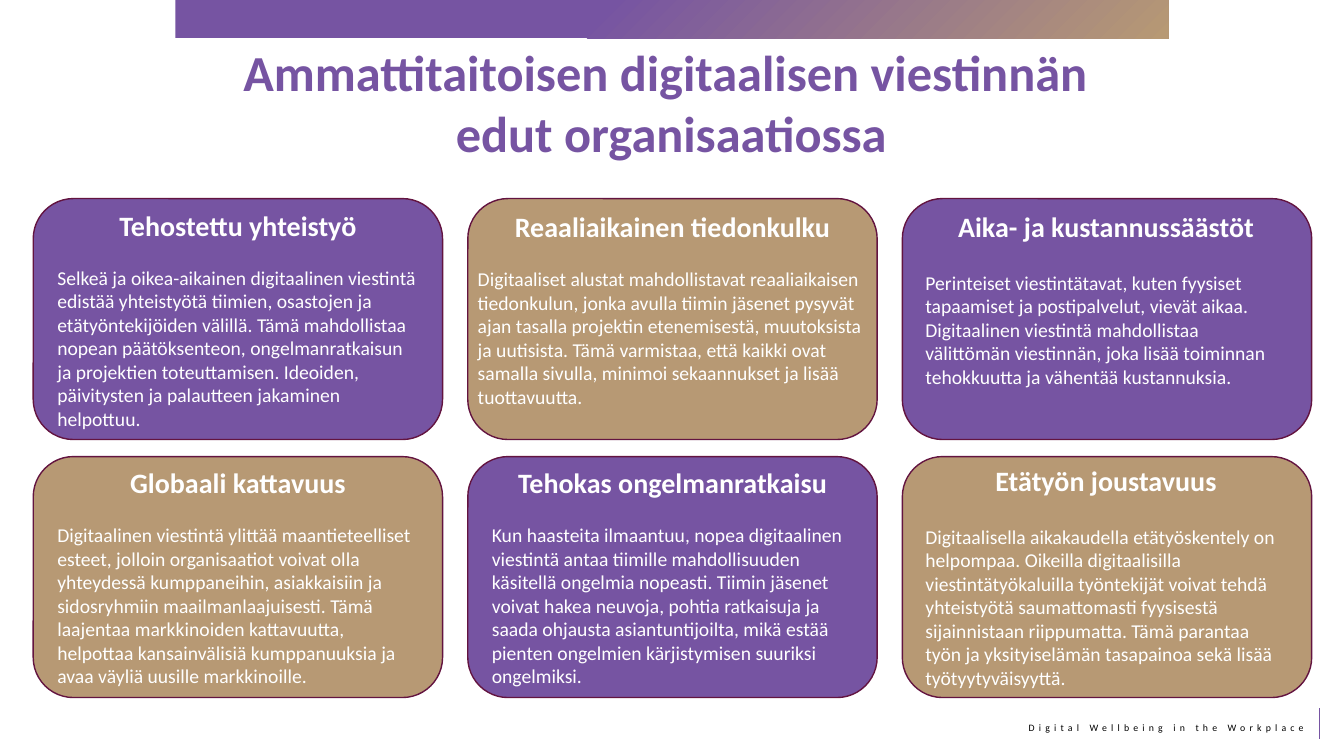
import dataclasses
import typing

import lxml.etree
import pptx
import pptx.dml.color
import pptx.enum.dml
import pptx.enum.shapes
import pptx.enum.text
import pptx.oxml.ns
import pptx.util

Inches = pptx.util.Inches
Align = pptx.enum.text.PP_ALIGN
Shape = pptx.enum.shapes.MSO_SHAPE
qn = pptx.oxml.ns.qn


@dataclasses.dataclass(frozen=True)
class Theme:
    font: str = "Calibri"
    purple: str = "7654A2"
    gold: str = "B79974"
    wine: str = "631440"
    white: str = "FFFFFF"
    black: str = "000000"
    title: int = 36
    head: int = 20
    body: int = 14
    foot: int = 7


class Box(typing.NamedTuple):
    left: float
    top: float
    width: float
    height: float

    def place(self) -> list[int]:
        return [Inches(side) for side in self]


@dataclasses.dataclass(frozen=True)
class Card:
    head: str
    body: str
    text: Box
    gap: float = 17


THEME = Theme()
COLS = 3
FIRST = Box(0.33, 1.97, 4.06, 2.39)
STEP_X, STEP_Y = 4.31, 2.56

CARDS = [
    Card(
        "Tehostettu yhteistyö",
        "Selkeä ja oikea-aikainen digitaalinen viestintä edistää yhteistyötä tiimien, "
        "osastojen ja etätyöntekijöiden välillä. Tämä mahdollistaa nopean päätöksenteon, "
        "ongelmanratkaisun ja projektien toteuttamisen. Ideoiden, päivitysten ja "
        "palautteen jakaminen helpottuu.",
        Box(0.47, 1.97, 3.78, 2.39),
    ),
    Card(
        "Reaaliaikainen tiedonkulku",
        "Digitaaliset alustat mahdollistavat reaaliaikaisen tiedonkulun, jonka avulla "
        "tiimin jäsenet pysyvät ajan tasalla projektin etenemisestä, muutoksista ja "
        "uutisista. Tämä varmistaa, että kaikki ovat samalla sivulla, minimoi "
        "sekaannukset ja lisää tuottavuutta.",
        Box(4.64, 2.02, 4.06, 2.09),
    ),
    Card(
        "Aika- ja kustannussäästöt",
        "Perinteiset viestintätavat, kuten fyysiset tapaamiset ja postipalvelut, vievät "
        "aikaa. Digitaalinen viestintä mahdollistaa välittömän viestinnän, joka lisää "
        "toiminnan tehokkuutta ja vähentää kustannuksia.",
        Box(9.08, 1.99, 3.78, 1.95),
        19.5,
    ),
    Card(
        "Globaali kattavuus",
        "Digitaalinen viestintä ylittää maantieteelliset esteet, jolloin organisaatiot "
        "voivat olla yhteydessä kumppaneihin, asiakkaisiin ja sidosryhmiin "
        "maailmanlaajuisesti. Tämä laajentaa markkinoiden kattavuutta, helpottaa "
        "kansainvälisiä kumppanuuksia ja avaa väyliä uusille markkinoille.",
        Box(0.47, 4.56, 3.78, 2.32),
    ),
    Card(
        "Tehokas ongelmanratkaisu",
        "Kun haasteita ilmaantuu, nopea digitaalinen viestintä antaa tiimille "
        "mahdollisuuden käsitellä ongelmia nopeasti. Tiimin jäsenet voivat hakea neuvoja, "
        "pohtia ratkaisuja ja saada ohjausta asiantuntijoilta, mikä estää pienten "
        "ongelmien kärjistymisen suuriksi ongelmiksi.",
        Box(4.78, 4.56, 3.78, 2.32),
    ),
    Card(
        "Etätyön joustavuus",
        "Digitaalisella aikakaudella etätyöskentely on helpompaa. Oikeilla digitaalisilla "
        "viestintätyökaluilla työntekijät voivat tehdä yhteistyötä saumattomasti "
        "fyysisestä sijainnistaan riippumatta. Tämä parantaa työn ja yksityiselämän "
        "tasapainoa sekä lisää työtyytyväisyyttä.",
        Box(9.08, 4.54, 3.78, 2.36),
        19.5,
    ),
]


def tint(code: str) -> pptx.dml.color.RGBColor:
    return pptx.dml.color.RGBColor.from_string(code)


def add_run(para, text: str, size: int, color: str, bold: bool = False):
    run = para.add_run()
    run.text = text
    run.font.name = THEME.font
    run.font.size = pptx.util.Pt(size)
    run.font.bold = bold
    run.font.color.rgb = tint(color)
    return run


def add_text(shapes, box: Box):
    frame = shapes.add_textbox(*box.place()).text_frame
    frame.word_wrap = True
    return frame


def draw_banner(shapes) -> None:
    banner = shapes.add_shape(Shape.RECTANGLE, *Box(1.74, 0, 9.85, 0.38).place())
    banner.shadow.inherit = False
    banner.line.fill.background()
    banner.fill.gradient()
    stops = banner.fill.gradient_stops
    for stop, color, spot in zip(stops, (THEME.gold, THEME.purple), (0, 0.58)):
        stop.color.rgb = tint(color)
        stop.position = spot
    grad = banner._element.spPr.find(qn("a:gradFill"))
    grad.remove(grad.find(qn("a:lin")))
    focus = lxml.etree.Element(qn("a:path"), path="circle")
    lxml.etree.SubElement(focus, qn("a:fillToRect"), l="100000", t="100000")
    grad.find(qn("a:gsLst")).addnext(focus)


def draw_title(shapes) -> None:
    para = add_text(shapes, Box(0.93, 0.36, 11.46, 0.88)).paragraphs[0]
    para.alignment = Align.CENTER
    look = (THEME.title, THEME.purple, True)
    add_run(para, "Ammattitaitoisen digitaalisen viestinnän ", *look)
    para.add_line_break()
    add_run(para, "edut organisaatiossa", *look)


def draw_foot(shapes) -> None:
    para = add_text(shapes, Box(9.68, 7.11, 3.35, 0.22)).paragraphs[0]
    para.alignment = Align.RIGHT
    run = add_run(para, "Digital Wellbeing in the Workplace", THEME.foot, THEME.black)
    run.font._element.set("spc", "300")
    ends = [Inches(side) for side in (13.09, 7.33, 13.09, 7.02)]
    rule = shapes.add_connector(pptx.enum.shapes.MSO_CONNECTOR.STRAIGHT, *ends)
    rule.line.color.rgb = tint(THEME.purple)
    rule.line.width = pptx.util.Pt(0.75)
    lxml.etree.SubElement(rule._element.spPr, qn("a:effectLst"))


def draw_card(shapes, card: Card, box: Box, color: str) -> None:
    group = shapes.add_group_shape().shapes
    panel = group.add_shape(Shape.ROUNDED_RECTANGLE, *box.place())
    panel.shadow.inherit = False
    panel.fill.solid()
    panel.fill.fore_color.rgb = tint(color)
    panel.line.color.rgb = tint(THEME.wine)
    panel.line.width = pptx.util.Pt(1)
    frame = add_text(group, card.text)
    frame.auto_size = pptx.enum.text.MSO_AUTO_SIZE.SHAPE_TO_FIT_TEXT
    frame.vertical_anchor = pptx.enum.text.MSO_ANCHOR.MIDDLE
    head = frame.paragraphs[0]
    head.alignment = Align.CENTER
    head.space_after = pptx.util.Pt(card.gap)
    add_run(head, card.head, THEME.head, THEME.white, True)
    add_run(frame.add_paragraph(), card.body, THEME.body, THEME.white)


def main() -> None:
    deck = pptx.Presentation()
    deck.slide_width, deck.slide_height = Inches(13.33), Inches(7.5)
    shapes = deck.slides.add_slide(deck.slide_layouts[6]).shapes
    draw_foot(shapes)
    draw_banner(shapes)
    draw_title(shapes)
    for spot, card in enumerate(CARDS):
        row, col = divmod(spot, COLS)
        box = FIRST._replace(left=FIRST.left + col * STEP_X, top=FIRST.top + row * STEP_Y)
        draw_card(shapes, card, box, THEME.gold if spot % 2 else THEME.purple)
    deck.save("out.pptx")


if __name__ == "__main__":
    main()
